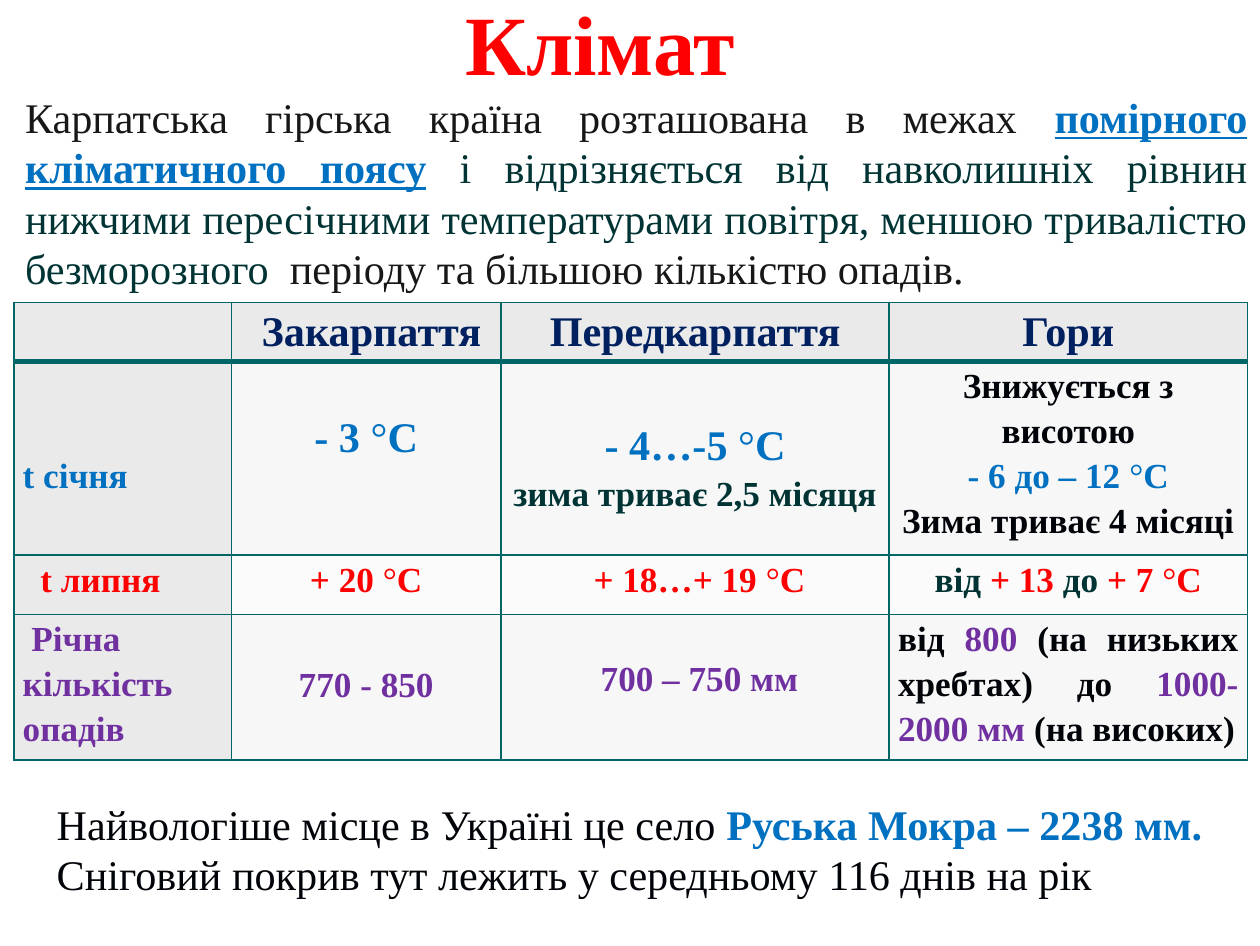
from dataclasses import dataclass

from lxml import etree
from pptx import Presentation, util as u
from pptx.dml.color import RGBColor
from pptx.enum import text as t
from pptx.oxml.ns import qn

FONT = "Times New Roman"
HUES = {
    "red": "FF0000", "ink": "171717", "blue": "0070C0", "pine": "003333",
    "navy": "002060", "black": "000308", "plum": "7030A0", "teal": "006666",
    "head": "EAEAEA", "band": "F7F7F7", "pale": "FBFBFB",
}
MID, LEFT, FULL = t.PP_ALIGN.CENTER, t.PP_ALIGN.LEFT, t.PP_ALIGN.JUSTIFY


@dataclass
class Run:
    text: str
    hue: str
    size: float = 20
    bold: bool = True
    line: bool = False


@dataclass
class Cell:
    lines: list[list[Run]]
    align: t.PP_ALIGN = MID
    top: float = 0
    left: float = 0.07


@dataclass
class Box:
    left: float
    top: float
    width: float
    height: float
    runs: list[Run]
    align: t.PP_ALIGN = LEFT


def color(hue: str) -> RGBColor:
    return RGBColor.from_string(HUES[hue])


def write(para, runs: list[Run], align: t.PP_ALIGN) -> None:
    para.alignment = align
    for item in runs:
        run = para.add_run()
        run.text = item.text
        font = run.font
        font.name, font.size = FONT, u.Pt(item.size)
        font.bold, font.underline = item.bold, item.line
        font.color.rgb = color(item.hue)


def place(shape, box: Box) -> None:
    shape.left, shape.top = u.Inches(box.left), u.Inches(box.top)
    shape.width, shape.height = u.Inches(box.width), u.Inches(box.height)
    frame = shape.text_frame
    frame.word_wrap = True
    frame.auto_size = t.MSO_AUTO_SIZE.NONE
    frame.vertical_anchor = t.MSO_ANCHOR.TOP
    write(frame.paragraphs[0], box.runs, box.align)


def border(cell, row: int) -> None:
    """Draw thin sides, with a thick rule between the header and row 1."""
    props = cell._tc.get_or_add_tcPr()
    thick = {"lnB": row == 0, "lnT": row == 1}
    for spot, side in enumerate(("lnL", "lnR", "lnT", "lnB")):
        width = u.Pt(3 if thick.get(side) else 1)
        edge = etree.Element(qn(f"a:{side}"), w=str(int(width)))
        fill = etree.SubElement(edge, qn("a:solidFill"))
        etree.SubElement(fill, qn("a:srgbClr"), val=HUES["teal"])
        props.insert(spot, edge)


def fill(cell, data: Cell, row: int, hue: str) -> None:
    cell.fill.solid()
    cell.fill.fore_color.rgb = color(hue)
    cell.margin_left, cell.margin_right = u.Inches(data.left), u.Inches(0.07)
    cell.margin_top, cell.margin_bottom = u.Inches(data.top), 0
    frame = cell.text_frame
    for spot, runs in enumerate(data.lines):
        para = frame.add_paragraph() if spot else frame.paragraphs[0]
        para.line_spacing = 1.15
        write(para, runs, data.align)
    border(cell, row)


def temp(text: str, hue: str, size: float = 20) -> list[Run]:
    """Give a temperature whose degree sign is not bold."""
    return [Run(text, hue, size), Run("°", hue, size, False),
            Run("С", hue, size)]


TITLE = Box(3.09, -0.12, 3.31, 0.91, [Run("Клімат", "red", 48)], MID)
INTRO = Box(0.1, 0.67, 9.86, 1.72, [
    Run("Карпатська гірська країна розташована в межах ", "ink", 24, False),
    Run("помірного кліматичного поясу", "blue", 24, line=True),
    Run(" ", "blue", 24),
    Run("і відрізняється від навколишніх рівнин нижчими пересічними "
        "температурами повітря, меншою тривалістю безморозного ",
        "pine", 24, False),
    Run(" періоду та більшою кількістю опадів.", "ink", 24, False),
], FULL)
NOTE = Box(0.35, 6.26, 9.61, 0.91, [
    Run("Найвологіше місце в Україні це село ", "black", 24, False),
    Run("Руська Мокра – 2238 мм. ", "blue", 24),
    Run("Сніговий покрив тут лежить у середньому 116 днів на рік",
        "black", 24, False),
])

COLS = [1.72, 2.13, 3.07, 2.83]
ROWS = [0.47, 1.53, 0.47, 1.15]
BANDS = ["head", "band", "pale", "band"]
HEADS = ["", " Закарпаття", "Передкарпаття", "Гори"]
GRID = [
    [Cell([[Run(name, "navy", 24)]] if name else []) for name in HEADS],
    [
        Cell([[Run("t січня", "blue")]], LEFT, 0.71),
        Cell([temp("- 3 ", "blue", 24)], top=0.37),
        Cell([temp("- 4…-5 ", "blue", 24),
              [Run("зима триває 2,5 місяця", "pine")]], top=0.43),
        Cell([[Run("Знижується з висотою", "black")],
              temp("- 6 до – 12 ", "blue"),
              [Run("Зима триває 4 місяці", "black")]]),
    ],
    [
        Cell([[Run("t липня", "red")]], LEFT, left=0.21),
        Cell([temp("+ 20 ", "red")]),
        Cell([temp(" + 18…+ 19 ", "red")]),
        Cell([[Run("від ", "pine"), Run("+ 13 ", "red"), Run("до ", "pine"),
               *temp("+ 7 ", "red")]]),
    ],
    [
        Cell([[Run(" Річна кількість опадів", "plum")]], LEFT),
        Cell([[Run("770 - 850", "plum")]], top=0.36),
        Cell([[Run(" 700 – 750 мм", "plum")]], top=0.31),
        Cell([[Run("від ", "black"), Run("800 ", "plum"),
               Run("(на низьких хребтах) до ", "black"),
               Run("1000-2000 мм ", "plum"),
               Run("(на високих)", "black")]], FULL),
    ],
]


def chart(slide) -> None:
    """Add the climate table."""
    frame = slide.shapes.add_table(
        len(ROWS), len(COLS), u.Inches(0.11), u.Inches(2.39),
        u.Inches(sum(COLS)), u.Inches(sum(ROWS)))
    table = frame.table
    table.first_row = table.horz_banding = False
    for col, width in zip(table.columns, COLS):
        col.width = u.Inches(width)
    for row, height in enumerate(ROWS):
        table.rows[row].height = u.Inches(height)
        for col, data in enumerate(GRID[row]):
            hue = BANDS[row] if col else "head"
            fill(table.cell(row, col), data, row, hue)


def main() -> None:
    deck = Presentation()
    deck.slide_width, deck.slide_height = u.Inches(9.96), u.Inches(7.48)
    slide = deck.slides.add_slide(deck.slide_layouts[5])
    place(slide.shapes.title, TITLE)
    for box in (INTRO, NOTE):
        place(slide.shapes.add_textbox(0, 0, 0, 0), box)
    chart(slide)
    deck.save("out.pptx")


if __name__ == "__main__":
    main()
